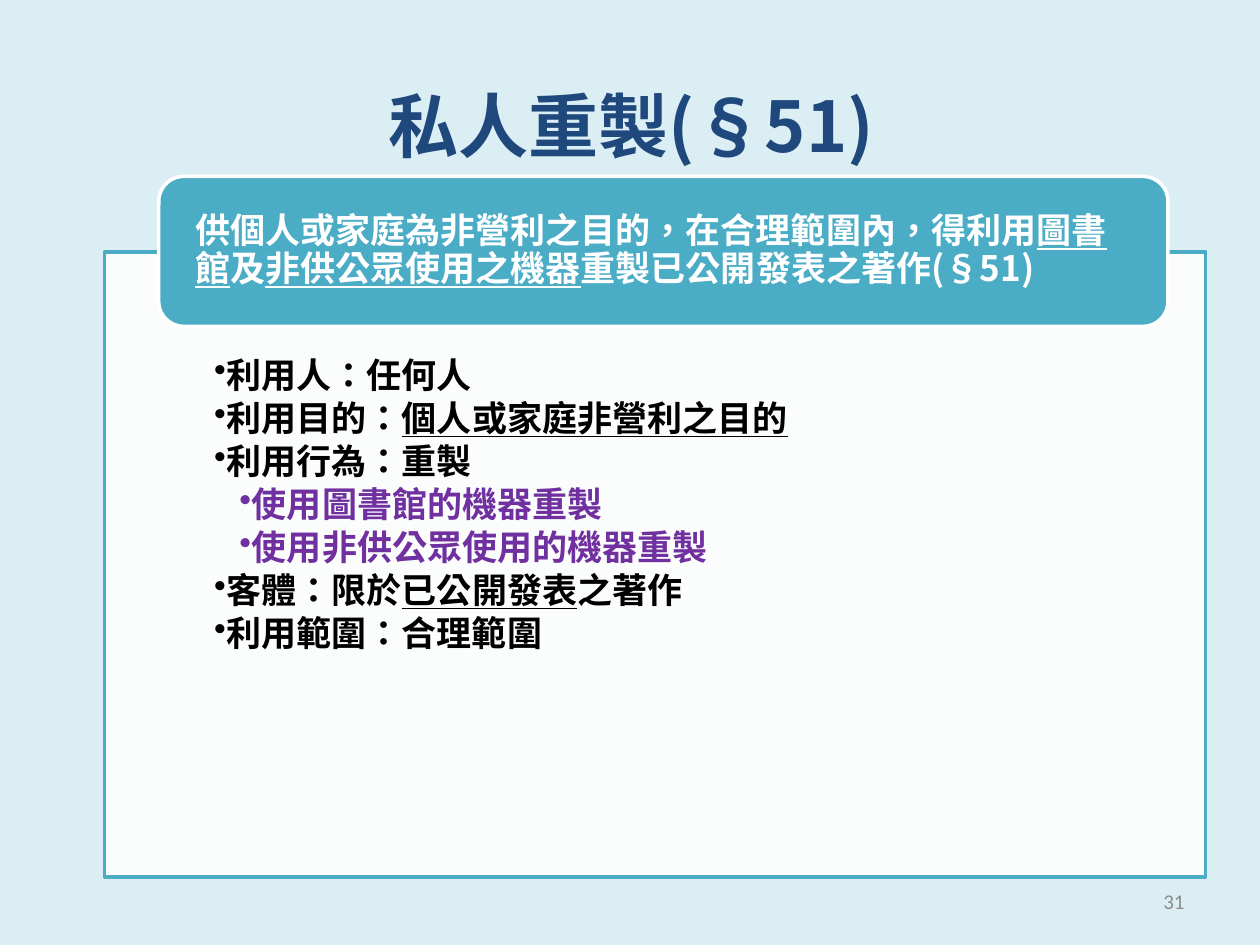
import pptx
import pptx.util
import pptx.dml.color
import pptx.enum.shapes
import pptx.enum.text
import pptx.oxml.ns
import lxml.etree

Inches, Pt = pptx.util.Inches, pptx.util.Pt
RGB = pptx.dml.color.RGBColor
SHAPE = pptx.enum.shapes.MSO_SHAPE
ALIGN = pptx.enum.text.PP_ALIGN
MIDDLE = pptx.enum.text.MSO_ANCHOR.MIDDLE
qn = pptx.oxml.ns.qn

PALE = RGB(0xDB, 0xEE, 0xF4)
NAVY = RGB(0x1F, 0x49, 0x7D)
TEAL = RGB(0x4B, 0xAC, 0xC6)
WHITE = RGB(0xFF, 0xFF, 0xFF)
BLACK = RGB(0, 0, 0)
PURPLE = RGB(0x70, 0x30, 0xA0)
GRAY = RGB(0x8C, 0x8C, 0x8C)
CJK = "Noto Sans CJK SC"


def write(para, parts, size, color, face=CJK, bold=True):
    """Fill a paragraph; every second part is underlined."""
    for i, part in enumerate(parts):
        run = para.add_run()
        run.text = part
        run._r.get_or_add_rPr().set("lang", "zh-TW")
        if i % 2:
            run.font.underline = True
    font = para.font
    font.size, font.bold, font.name = Pt(size), bold, face
    font.color.rgb = color
    base = para._p.pPr.find(qn("a:defRPr"))
    lxml.etree.SubElement(base, qn("a:ea")).set("typeface", face)


def panel(kind, box, fill, line, pads):
    """Add a filled shape with left-aligned text and side, top, bottom pads."""
    shape = slide.shapes.add_shape(kind, *map(Inches, box))
    shape.shadow.inherit = False
    shape.fill.solid()
    shape.fill.fore_color.rgb = fill
    shape.line.color.rgb = line
    shape.line.width = Pt(2)
    frame = shape.text_frame
    frame.word_wrap = True
    side, top, bottom = map(Inches, pads)
    frame.margin_left = frame.margin_right = side
    frame.margin_top, frame.margin_bottom = top, bottom
    return shape


deck = pptx.Presentation()
deck.slide_width, deck.slide_height = Inches(10), Inches(7.5)
slide = deck.slides.add_slide(deck.slide_layouts[5])
slide.background.fill.solid()
slide.background.fill.fore_color.rgb = PALE

# Title
title = slide.shapes.title
title.left, title.top = Inches(0.75), Inches(0.36)
title.width, title.height = Inches(8.52), Inches(1.25)
title.text_frame.vertical_anchor = MIDDLE
para = title.text_frame.paragraphs[0]
para.alignment = ALIGN.CENTER
write(para, ["私人重製(§51)"], 40, NAVY)

# Conditions, in a slightly transparent frame
body = panel(SHAPE.RECTANGLE, (0.83, 2, 8.74, 4.96), WHITE, TEAL,
             (0.68, 0.84, 0.16))
tint = body.fill._xPr.find(qn("a:solidFill"))[0]
lxml.etree.SubElement(tint, qn("a:alpha")).set("val", "90000")
body.text_frame.vertical_anchor = pptx.enum.text.MSO_ANCHOR.TOP

items = [
    (0, ["利用人：任何人"]),
    (0, ["利用目的：", "個人或家庭非營利之目的"]),
    (0, ["利用行為：重製"]),
    (1, ["使用圖書館的機器重製"]),
    (1, ["使用非供公眾使用的機器重製"]),
    (0, ["客體：限於", "已公開發表", "之著作"]),
    (0, ["利用範圍：合理範圍"]),
]
looks = [(0.19, 0, BLACK), (0.49, -0.1, PURPLE)]
for i, (level, parts) in enumerate(items):
    frame = body.text_frame
    para = frame.add_paragraph() if i else frame.paragraphs[0]
    left, hang, color = looks[level]
    para.level = level
    para.alignment = ALIGN.LEFT
    para.line_spacing = 0.9
    para.space_after = Pt(3)
    props = para._p.get_or_add_pPr()
    props.set("marL", str(Inches(left)))
    props.set("indent", str(Inches(hang)))
    lxml.etree.SubElement(props, qn("a:buChar")).set("char", "•")
    write(para, parts, 20, color)

# Rule summary
rule = panel(SHAPE.ROUNDED_RECTANGLE, (1.26, 1.4, 8.01, 1.19), TEAL, WHITE,
             (0.23, 0, 0))
rule.text_frame.vertical_anchor = MIDDLE
para = rule.text_frame.paragraphs[0]
para.alignment = ALIGN.LEFT
para.line_spacing = 0.9
write(para, ["供個人或家庭為非營利之目的，在合理範圍內，得利用", "圖書館", "及",
             "非供公眾使用之機器", "重製已公開發表之著作(§51)"], 20, WHITE)

# Page number
page = slide.shapes.add_textbox(Inches(7.17), Inches(6.95),
                                Inches(2.33), Inches(0.4))
page.text_frame.word_wrap = True
page.text_frame.vertical_anchor = MIDDLE
para = page.text_frame.paragraphs[0]
para.alignment = ALIGN.RIGHT
write(para, ["31"], 12, GRAY, "Calibri", False)

deck.save("out.pptx")
